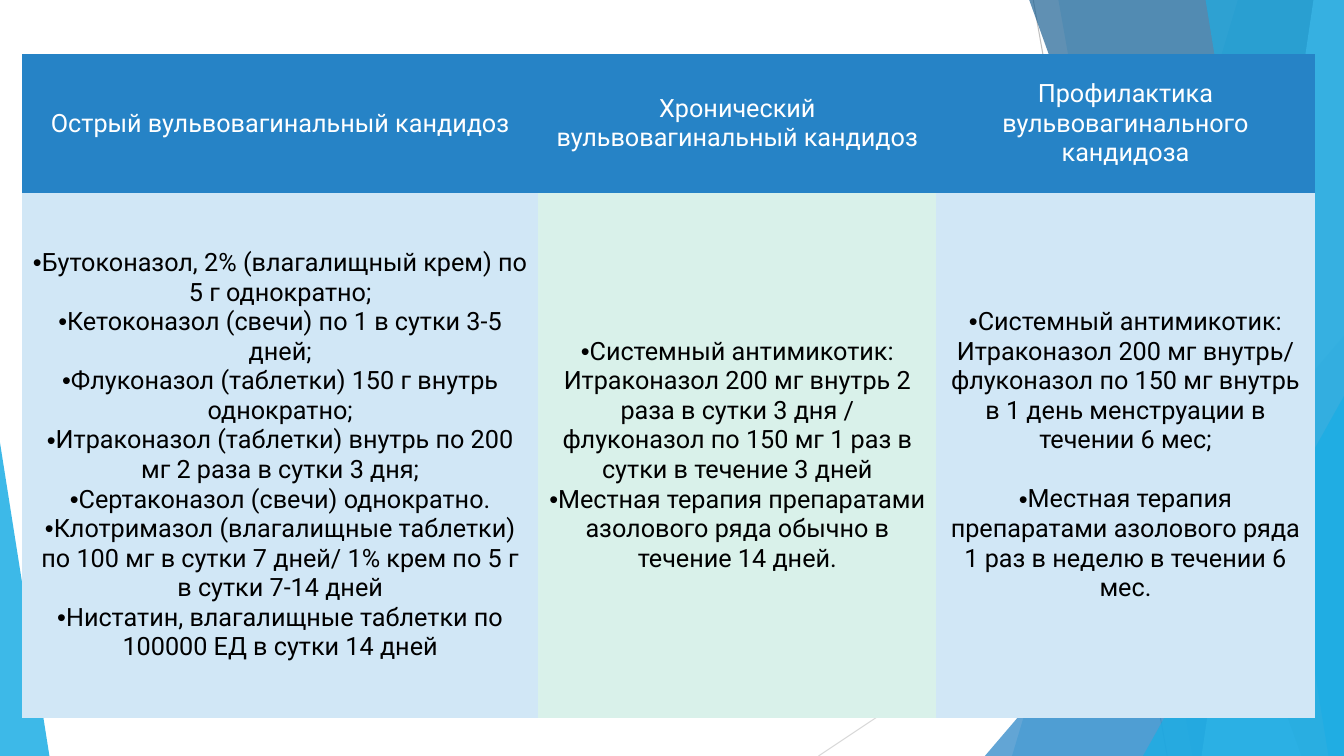
from lxml.etree import SubElement
from pptx import Presentation
from pptx.dml.color import RGBColor
from pptx.enum.shapes import MSO_CONNECTOR as Link, MSO_SHAPE as Shape
from pptx.enum.text import MSO_ANCHOR as Anchor, PP_ALIGN as Align
from pptx.oxml.ns import qn
from pptx.util import Inches, Pt

SKY, BLUE, NAVY, PALE = "1CADE4", "2683C6", "1D6294", "77CEEF"
NO_GRID = "{2D5ABB26-0587-4C30-8999-92F81FD0307C}"


def rgb(value):
    return RGBColor.from_string(value)


class Deck:
    font = "Roboto"
    size = Pt(18)

    def __init__(self, width, height):
        self.prs = Presentation()
        self.prs.slide_width = Inches(width)
        self.prs.slide_height = Inches(height)
        self.s = self.prs.slides.add_slide(self.prs.slide_layouts[6])

    def x(self, percent):
        return round(self.prs.slide_width * percent / 100)

    def y(self, percent):
        return round(self.prs.slide_height * percent / 100)

    def line(self, x1, y1, x2, y2, color):
        link = self.s.shapes.add_connector(
            Link.STRAIGHT, self.x(x1), self.y(y1), self.x(x2), self.y(y2))
        link.line.color.rgb = rgb(color)
        link.line.width = Pt(0.75)
        SubElement(link._element.spPr, qn("a:effectLst"))

    def paint(self, sp, color, opacity):
        sp.shadow.inherit = False
        sp.line.fill.background()
        sp.fill.solid()
        sp.fill.fore_color.rgb = rgb(color)
        tone = sp._element.spPr.find(qn("a:solidFill"))[0]
        SubElement(tone, qn("a:alpha")).set("val", str(opacity * 1000))

    def band(self, top, bottom, color, opacity):
        outline = self.s.shapes.build_freeform(self.x(top), 0)
        outline.add_line_segments(
            [(self.x(100), 0), (self.x(100), self.y(100)), (self.x(bottom), self.y(100))])
        self.paint(outline.convert_to_shape(), color, opacity)

    def triangle(self, left, top, width, apex, color, opacity):
        sp = self.s.shapes.add_shape(
            Shape.ISOSCELES_TRIANGLE, self.x(left), self.y(top), self.x(width), self.y(100 - top))
        sp.adjustments[0] = apex
        self.paint(sp, color, opacity)

    def bullet(self, p):
        pPr = p._p.get_or_add_pPr()
        pPr.set("marL", "0")
        pPr.set("indent", "0")
        SubElement(pPr, qn("a:buFont")).set("typeface", "Arial")
        SubElement(pPr, qn("a:buChar")).set("char", "•")

    def cell(self, cell, items, fill, color, bulleted=False, gap=0):
        cell.fill.solid()
        cell.fill.fore_color.rgb = rgb(fill)
        cell.vertical_anchor = Anchor.MIDDLE
        tf = cell.text_frame
        for i, text in enumerate(items):
            p = tf.add_paragraph() if i else tf.paragraphs[0]
            p.alignment = Align.CENTER
            if i and gap:
                p.space_before = Pt(gap)
            if bulleted:
                self.bullet(p)
            r = p.add_run()
            r.text = text
            r.font.name = self.font
            r.font.size = self.size
            r.font.color.rgb = rgb(color)

    def table(self, left, top, widths, heights, columns):
        table = self.s.shapes.add_table(
            len(heights), len(widths), self.x(left), self.y(top),
            self.x(sum(widths)), self.y(sum(heights))).table
        table._tbl.tblPr.find(qn("a:tableStyleId")).text = NO_GRID
        for row, height in zip(table.rows, heights):
            row.height = self.y(height)
        for i, (width, (head, items, fill, gap)) in enumerate(zip(widths, columns)):
            table.columns[i].width = self.x(width)
            self.cell(table.cell(0, i), [head], BLUE, "FFFFFF")
            self.cell(table.cell(1, i), items, fill, "000000", True, gap)


ACUTE = [
    "Бутоконазол, 2% (влагалищный крем) по 5 г однократно;",
    "Кетоконазол (свечи) по 1 в сутки 3-5 дней;",
    "Флуконазол (таблетки) 150 г внутрь однократно;",
    "Итраконазол (таблетки) внутрь по 200 мг 2 раза в сутки 3 дня;",
    "Сертаконазол (свечи) однократно.",
    "Клотримазол (влагалищные таблетки) по 100 мг в сутки 7 дней/ 1% крем по 5 г в сутки 7-14 дней",
    "Нистатин, влагалищные таблетки по 100000 ЕД в сутки 14 дней",
]
CHRONIC = [
    "Системный антимикотик: Итраконазол 200 мг внутрь 2 раза в сутки 3 дня / "
    "флуконазол по 150 мг 1 раз в сутки в течение 3 дней",
    "Местная терапия препаратами азолового ряда обычно в течение 14 дней.",
]
PREVENTION = [
    "Системный антимикотик: Итраконазол 200 мг внутрь/ флуконазол по 150 мг внутрь "
    "в 1 день менструации в течении 6 мес;",
    "Местная терапия препаратами азолового ряда 1 раз в неделю в течении 6 мес.",
]


def main():
    deck = Deck(13.33, 7.5)
    deck.line(76.88, 0, 86.85, 100, "BFBFBF")
    deck.line(100, 53.73, 60.9, 100, "D9D9D9")
    deck.band(92.1, 75.3, SKY, 30)
    deck.band(78.75, 88.73, SKY, 20)
    deck.triangle(73.28, 44.4, 26.72, 1, BLUE, 72)
    deck.band(76.58, 96.83, NAVY, 70)
    deck.band(97.73, 89.4, PALE, 70)
    deck.band(89.7, 98.85, SKY, 65)
    deck.triangle(85.05, 52.4, 14.95, 1, SKY, 80)
    deck.triangle(0, 58.53, 3.68, 0, SKY, 85)
    deck.table(1.65, 7.2, [38.4, 29.63, 28.13], [18.27, 69.47], [
        ("Острый вульвовагинальный кандидоз", ACUTE, "D1E7F6", 0),
        ("Хронический вульвовагинальный кандидоз", CHRONIC, "D9F1EA", 0),
        ("Профилактика вульвовагинального кандидоза", PREVENTION, "D1E7F6", 21),
    ])
    deck.prs.save("out.pptx")


if __name__ == "__main__":
    main()
